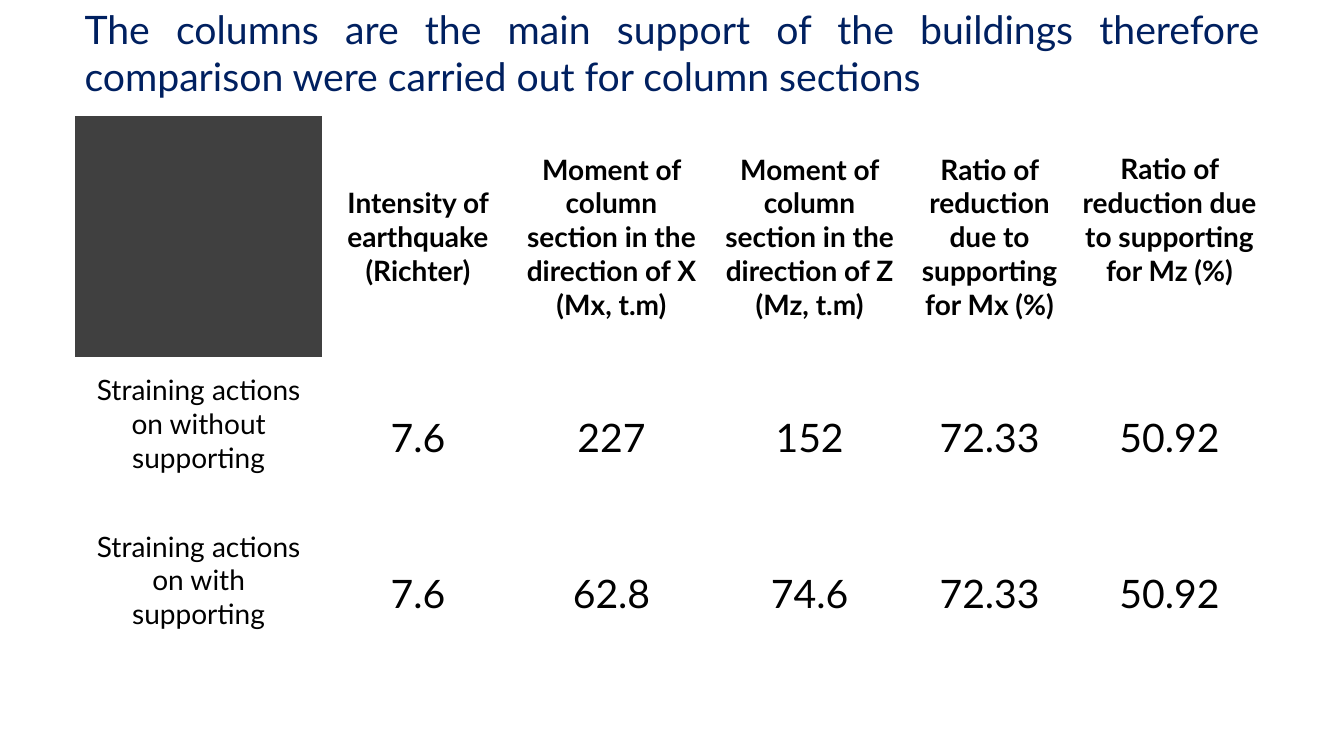
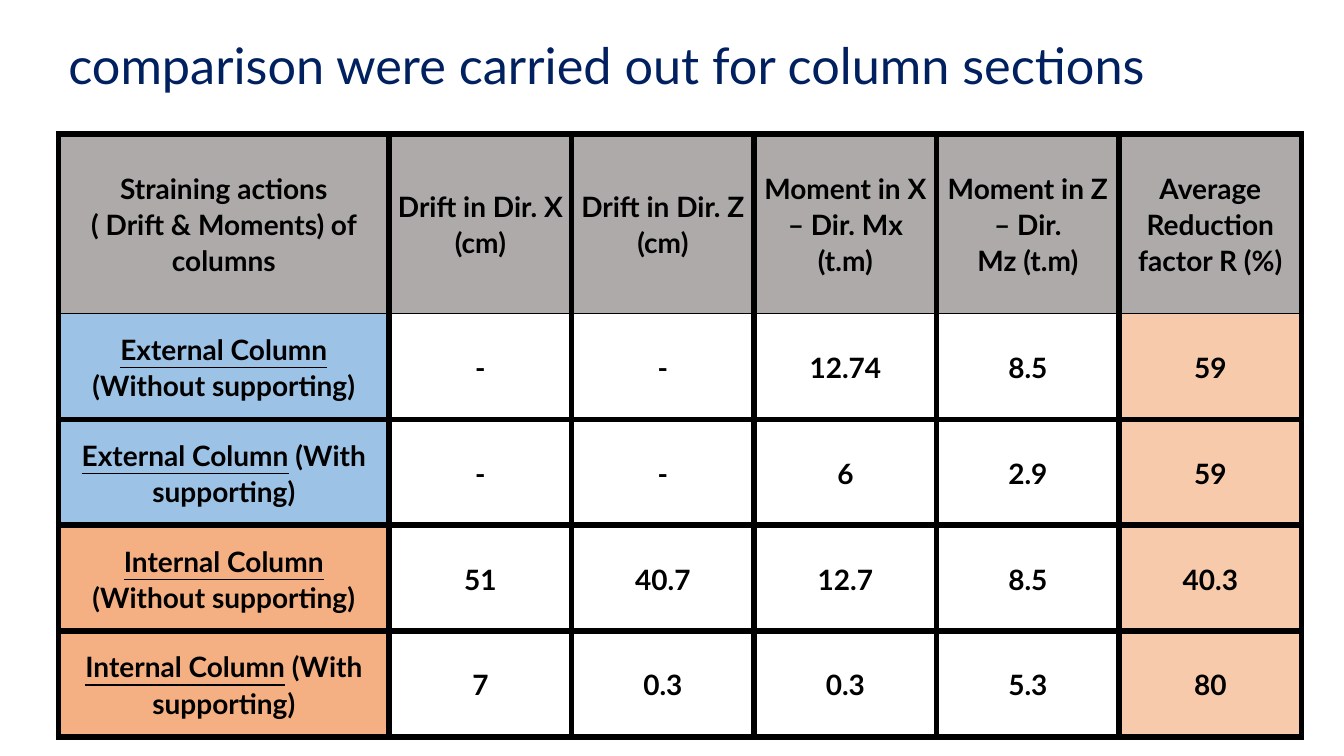
"""Build two slides that compare the straining actions of column sections."""
from lxml import etree
from pptx import Presentation
from pptx.dml.color import RGBColor
from pptx.enum.text import MSO_ANCHOR, PP_ALIGN
from pptx.oxml.ns import qn
from pptx.util import Emu, Pt

CENTER, LEFT, JUSTIFY = PP_ALIGN.CENTER, PP_ALIGN.LEFT, PP_ALIGN.JUSTIFY
TOP, MIDDLE = MSO_ANCHOR.TOP, MSO_ANCHOR.MIDDLE

PX = 9144
SLIDE_SIZE = (1333, 750)
BLANK_LAYOUT = 6
FONT = "Lato"
NAVY, BLACK, WHITE = "002060", "000000", "FFFFFF"
CHARCOAL, GRAY = "404040", "AEAAAA"
BLUE, ORANGE, PEACH = "9CC2E5", "F4B083", "F7CAAC"
TEXT_SIZE, VALUE_SIZE = 20, 28

SUPPORT_TITLE = {
    "text": "The columns are the main support of the buildings therefore "
            "comparison were carried out for column sections",
    "box": (74, 0, 1185, 120), "size": 28, "align": JUSTIFY,
}
SUPPORT_ROWS = [
    ["", "Intensity of earthquake (Richter)",
     "Moment of column section in the direction of X\n(Mx, t.m)",
     "Moment of column section in the direction of Z\n(Mz, t.m)",
     "Ratio of reduction due to supporting for Mx (%)",
     "Ratio of reduction due to supporting\nfor Mz (%)"],
    ["Straining actions on without supporting", "7.6", "227", "152", "72.33", "50.92"],
    ["Straining actions on with supporting", "7.6", "62.8", "74.6", "72.33", "50.92"],
]
SUPPORT_GRID = {
    "origin": (74, 114),
    "widths": (246, 189, 195, 198, 159, 198),
    "heights": (242, 155, 155),
}

COLUMN_TITLE = {
    "text": "comparison were carried out for column sections",
    "box": (58, 29, 1133, 86), "size": 36, "align": LEFT,
}
COLUMN_ROWS = [
    ["Straining actions\n( Drift & Moments) of columns",
     "Drift in Dir. X (cm)", "Drift in Dir. Z (cm)",
     "Moment in X – Dir. Mx (t.m)", "Moment in Z – Dir.\nMz (t.m)",
     "Average\nReduction factor R (%)"],
    ["External Column (Without supporting)", "-", "-", "12.74", "8.5", "59"],
    ["External Column (With supporting)", "-", "-", "6", "2.9", "59"],
    ["Internal Column (Without supporting)", "51", "40.7", "12.7", "8.5", "40.3"],
    ["Internal Column (With supporting)", "7", "0.3", "0.3", "5.3", "80"],
]
COLUMN_GRID = {
    "origin": (58, 133),
    "widths": (328,) + (181,) * 5,
    "heights": (178,) + (105,) * 4,
}
COLUMN_KINDS = {"External Column": BLUE, "Internal Column": ORANGE}


def px(value):
    return Emu(value * PX)


def color(value):
    return RGBColor.from_string(value)


def write_text(frame, text, *, size=TEXT_SIZE, ink=BLACK, bold=False,
               align=CENTER, spacing=1.0, underlined=""):
    """Fill a text frame, one paragraph a line, underlining one leading phrase."""
    for index, line in enumerate(text.split("\n")):
        paragraph = frame.add_paragraph() if index else frame.paragraphs[0]
        paragraph.alignment = align
        paragraph.line_spacing = spacing
        rest = line.removeprefix(underlined)
        for part, underline in ((underlined, True), (rest, False)):
            if not part:
                continue
            run = paragraph.add_run()
            run.text = part
            run.font.name = FONT
            run.font.size = Pt(size)
            run.font.bold = bold
            run.font.underline = underline
            run.font.color.rgb = color(ink)


def add_title(slide, title):
    frame = slide.shapes.add_textbox(*map(px, title["box"])).text_frame
    frame.word_wrap = True
    frame.vertical_anchor = TOP
    write_text(frame, title["text"], size=title["size"], ink=NAVY, align=title["align"])


def set_borders(cell, ink, left=1, right=1, top=1, bottom=1):
    """Put the four border lines, in points, ahead of the cell's fill."""
    properties = cell._tc.get_or_add_tcPr()
    sides = {"lnL": left, "lnR": right, "lnT": top, "lnB": bottom}
    for index, (side, width) in enumerate(sides.items()):
        line = etree.Element(qn(f"a:{side}"), w=str(Pt(width)))
        fill = etree.SubElement(line, qn("a:solidFill"))
        etree.SubElement(fill, qn("a:srgbClr"), val=ink)
        properties.insert(index, line)


def set_fill(cell, value):
    if value:
        cell.fill.solid()
        cell.fill.fore_color.rgb = color(value)
    else:
        cell.fill.background()


def add_table(slide, grid, rows, style_cell):
    """Lay out a plain table and style every cell by its row and column."""
    widths, heights = grid["widths"], grid["heights"]
    frame = slide.shapes.add_table(
        len(heights), len(widths), *map(px, grid["origin"]),
        px(sum(widths)), px(sum(heights)))
    table = frame.table
    table.first_row = table.horz_banding = False
    for column, width in zip(table.columns, widths):
        column.width = px(width)
    for row, height in zip(table.rows, heights):
        row.height = px(height)
    for row_index, row in enumerate(rows):
        for column_index, text in enumerate(row):
            cell = table.cell(row_index, column_index)
            cell.vertical_anchor = MIDDLE
            style_cell(cell, text, row_index, column_index)


def style_support_cell(cell, text, row, column):
    header, label = row == 0, column == 0
    last_header = header and column == len(SUPPORT_GRID["widths"]) - 1
    if last_header:
        cell.margin_bottom = px(39)
    elif label:
        cell.margin_bottom = px(31)
    size = TEXT_SIZE if header or label else VALUE_SIZE
    write_text(cell.text_frame, text, size=size, bold=header)
    set_fill(cell, CHARCOAL if header and label else None)
    set_borders(cell, WHITE, top=3 if row == 1 else 1, bottom=3 if header else 1)


def style_column_cell(cell, text, row, column):
    header, label = row == 0, column == 0
    cell.margin_left = cell.margin_right = px(7)
    cell.margin_top = cell.margin_bottom = 0
    kind = next((name for name in COLUMN_KINDS if text.startswith(name)), "")
    write_text(cell.text_frame, text, bold=True, spacing=1.07, underlined=kind)
    last = column == len(COLUMN_GRID["widths"]) - 1
    if header:
        fill = GRAY
    elif label:
        fill = COLUMN_KINDS[kind]
    else:
        fill = PEACH if last else None
    set_fill(cell, fill)
    set_borders(cell, BLACK, left=4.5, right=4.5,
                top=1 if row == 1 else 4.5, bottom=1 if header else 4.5)


SLIDES = [
    (SUPPORT_TITLE, SUPPORT_GRID, SUPPORT_ROWS, style_support_cell),
    (COLUMN_TITLE, COLUMN_GRID, COLUMN_ROWS, style_column_cell),
]


def main():
    presentation = Presentation()
    presentation.slide_width, presentation.slide_height = map(px, SLIDE_SIZE)
    for title, grid, rows, style_cell in SLIDES:
        slide = presentation.slides.add_slide(presentation.slide_layouts[BLANK_LAYOUT])
        add_title(slide, title)
        add_table(slide, grid, rows, style_cell)
    presentation.save("out.pptx")


if __name__ == "__main__":
    main()
